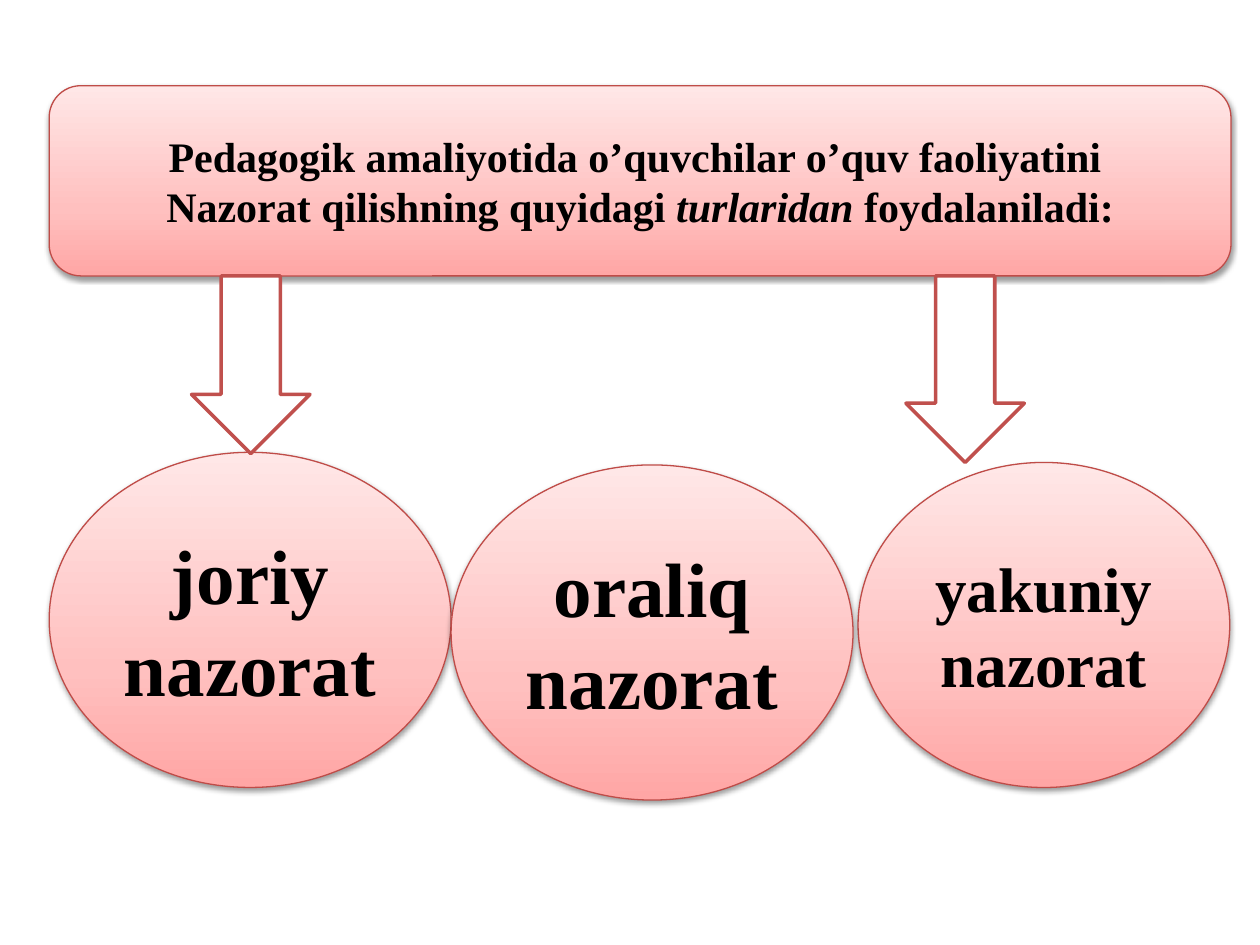
import copy

import pptx
import pptx.dml.color
import pptx.enum.shapes
import pptx.enum.text
import pptx.oxml
import pptx.oxml.ns
import pptx.util
from pptx.util import Inches

RGBColor = pptx.dml.color.RGBColor
ShapeType = pptx.enum.shapes.MSO_SHAPE

FONT = "Times New Roman"
BLACK = RGBColor(0x00, 0x00, 0x00)
WHITE = RGBColor(0xFF, 0xFF, 0xFF)
PANEL_LINE = RGBColor(0xBF, 0x4C, 0x48)
ARROW_LINE = RGBColor(0xC0, 0x50, 0x4D)
GRADIENT = [
    (0, RGBColor(0xFF, 0xA6, 0xA5)),
    (35, RGBColor(0xFF, 0xC0, 0xBF)),
    (100, RGBColor(0xFF, 0xE7, 0xE7)),
]
SHADOW_XML = (
    f'<a:outerShdw {pptx.oxml.ns.nsdecls("a")} blurRad="40000" dist="20000" '
    'dir="5400000" rotWithShape="0"><a:srgbClr val="000000">'
    '<a:alpha val="38000"/></a:srgbClr></a:outerShdw>'
)


def add_outlined_shape(slide, kind, box, color, width):
    shape = slide.shapes.add_shape(kind, *(Inches(length) for length in box))
    shape.shadow.inherit = False
    shape.line.color.rgb = color
    shape.line.width = pptx.util.Pt(width)
    return shape


def apply_gradient(shape):
    shape.fill.gradient()
    shape.fill.gradient_angle = 90
    stop_list = shape._element.spPr.find(".//" + pptx.oxml.ns.qn("a:gsLst"))
    while len(stop_list) < len(GRADIENT):
        stop_list.append(copy.deepcopy(stop_list[0]))
    for stop, (position, color) in zip(shape.fill.gradient_stops, GRADIENT):
        stop.position = position / 100
        stop.color.rgb = color


def apply_shadow(shape):
    effects = shape._element.spPr.find(pptx.oxml.ns.qn("a:effectLst"))
    effects.append(pptx.oxml.parse_xml(SHADOW_XML))


def add_text(paragraph, text, size=24, italic=False):
    paragraph.alignment = pptx.enum.text.PP_ALIGN.CENTER
    run = paragraph.add_run()
    run.text = text
    run.font.name = FONT
    run.font.size = pptx.util.Pt(size)
    run.font.bold = True
    run.font.italic = italic
    run.font.color.rgb = BLACK


def add_panel(slide, kind, box):
    """Add a shaded shape and return its text frame."""
    panel = add_outlined_shape(slide, kind, box, PANEL_LINE, 0.75)
    apply_gradient(panel)
    apply_shadow(panel)
    panel.text_frame.word_wrap = True
    panel.text_frame.vertical_anchor = pptx.enum.text.MSO_ANCHOR.MIDDLE
    return panel.text_frame


def add_oval(slide, text, box, size):
    frame = add_panel(slide, ShapeType.OVAL, box)
    add_text(frame.paragraphs[0], text, size=size)


def add_down_arrow(slide, left, height):
    box = (left, 2.19, 0.94, height)
    arrow = add_outlined_shape(slide, ShapeType.DOWN_ARROW, box, ARROW_LINE, 2)
    arrow.fill.solid()
    arrow.fill.fore_color.rgb = WHITE


def main():
    presentation = pptx.Presentation()
    presentation.slide_width = Inches(10)
    presentation.slide_height = Inches(7.5)
    slide = presentation.slides.add_slide(presentation.slide_layouts[6])

    # Heading panel
    heading = add_panel(slide, ShapeType.ROUNDED_RECTANGLE, (0.39, 0.68, 9.38, 1.51))
    add_text(heading.paragraphs[0], "Pedagogik amaliyotida o’quvchilar o’quv faoliyatini ")
    second_line = heading.add_paragraph()
    add_text(second_line, "Nazorat qilishning quyidagi ")
    add_text(second_line, "turlaridan ", italic=True)
    add_text(second_line, "foydalaniladi:")

    # Kinds of assessment, with arrows to the outer two
    add_oval(slide, "joriy nazorat", (0.39, 3.59, 3.19, 2.66), 44)
    add_oval(slide, "yakuniy nazorat", (6.81, 3.67, 2.95, 2.58), 36)
    add_down_arrow(slide, left=1.52, height=1.41)
    add_down_arrow(slide, left=7.19, height=1.48)
    add_oval(slide, "oraliq nazorat", (3.58, 3.69, 3.19, 2.66), 44)

    presentation.save("out.pptx")


if __name__ == "__main__":
    main()
